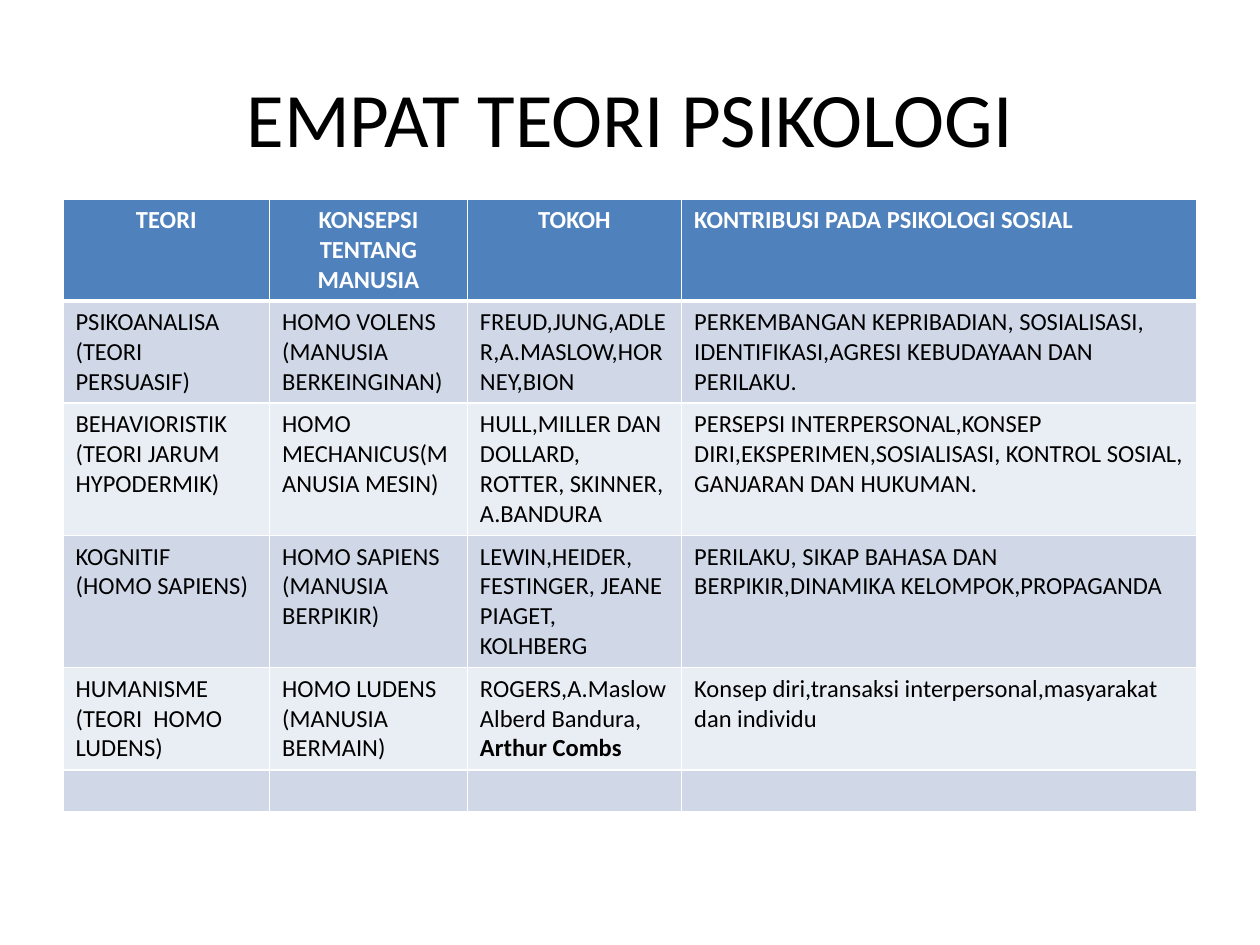
"""Build a slide with a table of four psychology theories."""
from dataclasses import dataclass

from lxml import etree
from pptx import Presentation, util as u
from pptx.dml import color
from pptx.enum import text
from pptx.oxml import ns

LEFT, CENTER, JUSTIFY = text.PP_ALIGN.LEFT, text.PP_ALIGN.CENTER, text.PP_ALIGN.JUSTIFY


@dataclass(frozen=True)
class Theme:
    font: str = "Calibri"
    title_size: int = 44
    body_size: int = 14
    ink: str = "000000"
    white: str = "FFFFFF"
    header: str = "4F81BD"
    bands: tuple = ("D0D8E8", "E9EDF4")
    rule: int = 1
    header_rule: int = 3


@dataclass(frozen=True)
class Cell:
    lines: tuple = ()
    align: int = LEFT
    bold_tail: str = ""


THEME = Theme()
COLUMNS = (1.64, 1.57, 1.7, 4.09)
HEIGHTS = (0.81, 0.81, 1.05, 1.05, 0.81, 0.33)
ROWS = (
    (Cell(("TEORI",), CENTER),
     Cell(("KONSEPSI TENTANG MANUSIA",), CENTER),
     Cell(("TOKOH",), CENTER),
     Cell(("KONTRIBUSI PADA PSIKOLOGI SOSIAL",))),
    (Cell(("PSIKOANALISA", "(TEORI PERSUASIF)")),
     Cell(("HOMO VOLENS (MANUSIA BERKEINGINAN)",)),
     Cell(("FREUD,JUNG,ADLER,A.MASLOW,HORNEY,BION",), JUSTIFY),
     Cell(("PERKEMBANGAN KEPRIBADIAN, SOSIALISASI, IDENTIFIKASI,AGRESI "
           "KEBUDAYAAN DAN PERILAKU.",))),
    (Cell(("BEHAVIORISTIK", "(TEORI JARUM HYPODERMIK)")),
     Cell(("HOMO MECHANICUS(MANUSIA MESIN)",)),
     Cell(("HULL,MILLER DAN DOLLARD, ROTTER, SKINNER, A.BANDURA",)),
     Cell(("PERSEPSI INTERPERSONAL,KONSEP DIRI,EKSPERIMEN,SOSIALISASI, "
           "KONTROL SOSIAL, GANJARAN DAN HUKUMAN.",))),
    (Cell(("KOGNITIF", "(HOMO SAPIENS)")),
     Cell(("HOMO SAPIENS (MANUSIA BERPIKIR)",)),
     Cell(("LEWIN,HEIDER, FESTINGER, JEANE PIAGET,", "KOLHBERG")),
     Cell(("PERILAKU, SIKAP BAHASA DAN BERPIKIR,DINAMIKA KELOMPOK,PROPAGANDA",))),
    (Cell(("HUMANISME", "(TEORI  HOMO LUDENS)")),
     Cell(("HOMO LUDENS (MANUSIA BERMAIN)",)),
     Cell(("ROGERS,A.Maslow", "Alberd Bandura,"), bold_tail=" Arthur Combs"),
     Cell(("Konsep diri,transaksi interpersonal,masyarakat dan individu",))),
    (Cell(),) * len(COLUMNS),
)


def add_run(p, words: str, size: int, ink: str, bold: bool = False) -> None:
    """Add one styled run to a paragraph."""
    r = p.add_run()
    r.text = words
    r.font.name, r.font.size, r.font.bold = THEME.font, u.Pt(size), bold
    r.font.color.rgb = color.RGBColor.from_string(ink)


def set_borders(tc, top: int, bottom: int) -> None:
    """Draw white rules on the four sides of a table cell."""
    props = tc.get_or_add_tcPr()
    widths = {"L": THEME.rule, "R": THEME.rule, "T": top, "B": bottom}
    for side, width in widths.items():
        ln = etree.SubElement(props, ns.qn(f"a:ln{side}"), w=str(u.Pt(width)))
        fill = etree.SubElement(ln, ns.qn("a:solidFill"))
        etree.SubElement(fill, ns.qn("a:srgbClr"), val=THEME.white)


def fill_cell(target, cell: Cell, row: int) -> None:
    """Write and style one table cell."""
    head = row == 0
    set_borders(target._tc, THEME.header_rule if row == 1 else THEME.rule,
                THEME.header_rule if head else THEME.rule)
    target.fill.solid()
    target.fill.fore_color.rgb = color.RGBColor.from_string(
        THEME.header if head else THEME.bands[(row - 1) % 2])
    ink = THEME.white if head else THEME.ink
    tf = target.text_frame
    p = tf.paragraphs[0]
    for i, line in enumerate(cell.lines):
        p = tf.add_paragraph() if i else p
        p.alignment = cell.align
        add_run(p, line, THEME.body_size, ink, head)
    if cell.bold_tail:
        add_run(p, cell.bold_tail, THEME.body_size, ink, True)
    if not cell.lines:
        etree.SubElement(p._p, ns.qn("a:endParaRPr"), sz=str(THEME.body_size * 100))


def add_title(s, words: str) -> None:
    """Add the centred slide title."""
    sp = s.shapes.add_textbox(u.Inches(0.5), u.Inches(0.3), u.Inches(9), u.Inches(1.25))
    tf = sp.text_frame
    tf.word_wrap = True
    tf.vertical_anchor = text.MSO_ANCHOR.MIDDLE
    p = tf.paragraphs[0]
    p.alignment = CENTER
    add_run(p, words, THEME.title_size, THEME.ink)


def add_theories(s) -> None:
    """Add the table of theories."""
    table = s.shapes.add_table(
        len(ROWS), len(COLUMNS), u.Inches(0.5), u.Inches(1.58),
        u.Inches(sum(COLUMNS)), u.Inches(sum(HEIGHTS))).table
    for column, width in zip(table.columns, COLUMNS):
        column.width = u.Inches(width)
    for i, (height, cells) in enumerate(zip(HEIGHTS, ROWS)):
        table.rows[i].height = u.Inches(height)
        for j, cell in enumerate(cells):
            fill_cell(table.cell(i, j), cell, i)


def main() -> None:
    """Build and save the presentation."""
    prs = Presentation()
    prs.slide_width, prs.slide_height = u.Inches(10), u.Inches(7.5)
    s = prs.slides.add_slide(prs.slide_layouts[6])
    add_title(s, "EMPAT TEORI PSIKOLOGI")
    add_theories(s)
    prs.save("out.pptx")


if __name__ == "__main__":
    main()
